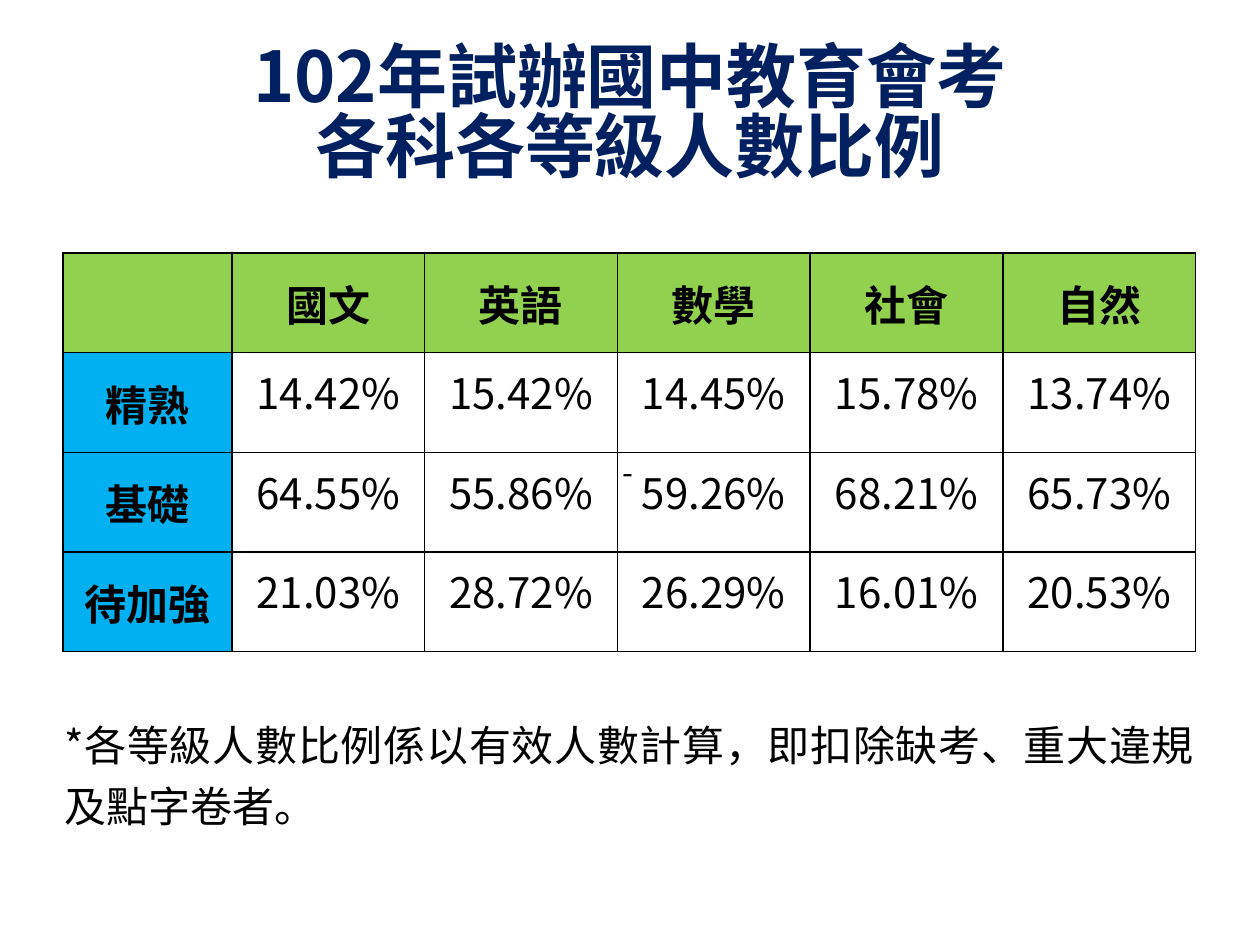
from lxml.etree import SubElement
from pptx import Presentation
from pptx.dml.color import RGBColor
from pptx.enum.text import MSO_ANCHOR, PP_ALIGN
from pptx.oxml.ns import qn
from pptx.util import Inches, Pt

FONT = "Noto Sans CJK SC"
COLORS = {"title": "002060", "header": "92D050", "level": "00B0F0", "ink": "000000"}
SUBJECTS = ["國文", "英語", "數學", "社會", "自然"]
RATIOS = {
    "精熟": ["14.42%", "15.42%", "14.45%", "15.78%", "13.74%"],
    "基礎": ["64.55%", "55.86%", "59.26%", "68.21%", "65.73%"],
    "待加強": ["21.03%", "28.72%", "26.29%", "16.01%", "20.53%"],
}
NOTE = "*各等級人數比例係以有效人數計算，即扣除缺考、重大違規及點字卷者。"
ROW_HEIGHTS = [0.39] + [0.79] * 4 + [1.21, 0.8]
COLUMN_WIDTHS = [1.34] + [1.53] * 5
NOTE_ROW = 5


def write(frame, text, size=24, color="ink", bold=False, align=PP_ALIGN.CENTER, spacing=None):
    paragraph = frame.paragraphs[0]
    paragraph.text = text
    paragraph.alignment = align
    paragraph.line_spacing = spacing
    for run in paragraph.runs:
        run.font.name = FONT
        run.font.size = Pt(size)
        run.font.bold = bold
        run.font.color.rgb = RGBColor.from_string(COLORS[color])
        SubElement(run.font._element, qn("a:ea"), typeface=FONT)


def set_margins(cell, side=0.0, top=0.0):
    cell.margin_left = cell.margin_right = Inches(side)
    cell.margin_top = Inches(top)
    cell.margin_bottom = 0
    cell.vertical_anchor = MSO_ANCHOR.MIDDLE


def set_borders(cell, visible_sides):
    properties = cell._tc.get_or_add_tcPr()
    for side in "LRTB":
        line = SubElement(properties, qn(f"a:ln{side}"), w=str(Pt(1)))
        if side in visible_sides:
            fill = SubElement(line, qn("a:solidFill"))
            SubElement(fill, qn("a:srgbClr"), val=COLORS["ink"])
        else:
            SubElement(line, qn("a:noFill"))


def set_fill(cell, color=None):
    if color:
        cell.fill.solid()
        cell.fill.fore_color.rgb = RGBColor.from_string(COLORS[color])
    else:
        cell.fill.background()


def add_title(slide, left, top, width, height):
    frame = slide.shapes.add_textbox(left, top, width, height).text_frame
    frame.word_wrap = True
    frame.vertical_anchor = MSO_ANCHOR.MIDDLE
    write(frame, "102年試辦國中教育會考\v各科各等級人數比例",
          size=40, color="title", bold=True, spacing=0.83)


def add_ratio_table(slide, left, top, width, height):
    table = slide.shapes.add_table(
        len(ROW_HEIGHTS), len(COLUMN_WIDTHS), left, top, width, height).table
    table.first_row = table.horz_banding = False
    for row, row_height in zip(table.rows, ROW_HEIGHTS):
        row.height = Inches(row_height)
    for column, column_width in zip(table.columns, COLUMN_WIDTHS):
        column.width = Inches(column_width)

    grid = [[""] + SUBJECTS] + [[level] + values for level, values in RATIOS.items()]
    for row, texts in enumerate(grid, start=1):
        for column, text in enumerate(texts):
            cell = table.cell(row, column)
            set_borders(cell, "LRTB")
            if row == 1 or column == 0:
                set_margins(cell, side=0.01, top=0.01)
                set_fill(cell, "header" if row == 1 else "level")
                write(cell.text_frame, text, bold=True)
            else:
                set_margins(cell, side=0.02)
                set_fill(cell)
                write(cell.text_frame, text, spacing=Pt(22))

    last_column = len(COLUMN_WIDTHS) - 1
    for row, sides in {0: "B", NOTE_ROW: "T", NOTE_ROW + 1: ""}.items():
        for column in range(last_column + 1):
            cell = table.cell(row, column)
            set_margins(cell)
            set_borders(cell, sides)
            set_fill(cell)
        table.cell(row, 0).merge(table.cell(row, last_column))

    note = table.cell(NOTE_ROW, 0)
    set_margins(note, side=0.01, top=0.49)
    write(note.text_frame, NOTE, align=PP_ALIGN.JUSTIFY)


def add_dash(slide, left, top, width, height):
    frame = slide.shapes.add_textbox(left, top, width, height).text_frame
    frame.word_wrap = False
    write(frame, "-", size=18, align=PP_ALIGN.LEFT)


def main():
    presentation = Presentation()
    presentation.slide_width = Inches(10)
    presentation.slide_height = Inches(7.5)
    slide = presentation.slides.add_slide(presentation.slide_layouts[6])
    add_title(slide, Inches(0.5), Inches(0.3), Inches(9), Inches(1.25))
    add_ratio_table(slide, Inches(0.5), Inches(1.62), Inches(9), Inches(5.55))
    add_dash(slide, Inches(4.84), Inches(3.55), Inches(0.33), Inches(0.4))
    presentation.save("out.pptx")


if __name__ == "__main__":
    main()
